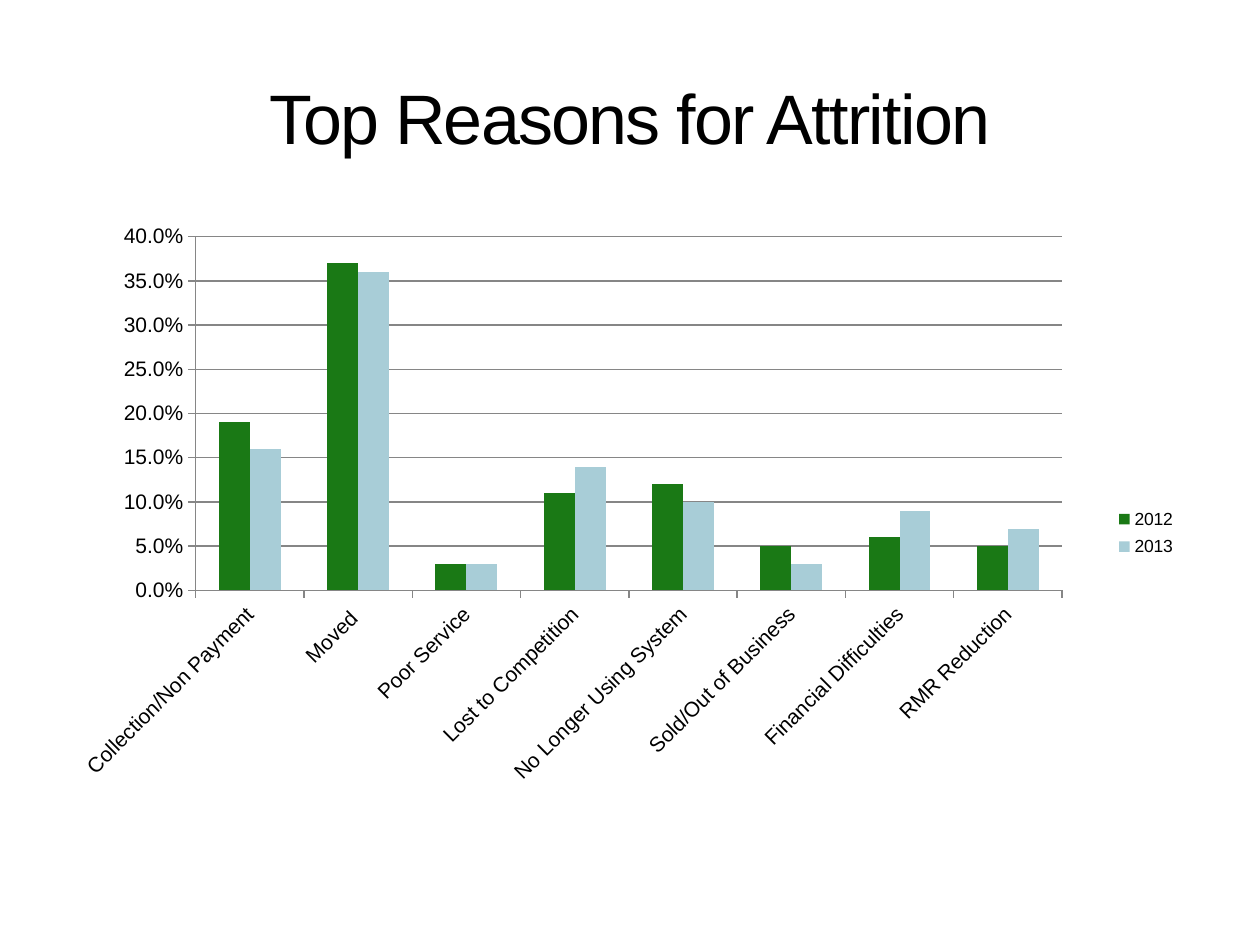
import lxml.etree
import pptx
import pptx.chart.data
import pptx.dml.color
import pptx.enum.chart
import pptx.enum.text
import pptx.oxml
import pptx.oxml.ns
import pptx.util
from pptx.util import Inches


def color(hex_string):
    return pptx.dml.color.RGBColor.from_string(hex_string)


def place(part, index, settings):
    """Give a chart part a fixed place, in fractions of the chart."""
    for old_layout in part.findall(pptx.oxml.ns.qn("c:layout")):
        part.remove(old_layout)
    layout = lxml.etree.Element(pptx.oxml.ns.qn("c:layout"))
    manual = lxml.etree.SubElement(layout, pptx.oxml.ns.qn("c:manualLayout"))
    for tag, value in settings.items():
        lxml.etree.SubElement(manual, pptx.oxml.ns.qn("c:" + tag)).set("val", str(value))
    part.insert(index, layout)


deck = pptx.Presentation()
deck.slide_width, deck.slide_height = Inches(10), Inches(7.5)
slide = deck.slides.add_slide(deck.slide_layouts[6])

# Title
title = slide.shapes.add_textbox(Inches(0.5), Inches(0.3), Inches(9), Inches(1.25))
title.text_frame.word_wrap = True
title.text_frame.vertical_anchor = pptx.enum.text.MSO_ANCHOR.MIDDLE
heading = title.text_frame.paragraphs[0]
heading.text = "Top Reasons for Attrition"
heading.alignment = pptx.enum.text.PP_ALIGN.CENTER
heading.font.name = "Arial"
heading.font.size = pptx.util.Pt(40)
heading.font.color.rgb = color("000000")
# Letter spacing in hundredths of a point
heading.runs[0].font._element.set("spc", "-100")

# Share of attrition by reason
reasons = [
    ("Collection/Non Payment", 0.19, 0.16),
    ("Moved ", 0.37, 0.36),
    ("Poor Service", 0.03, 0.03),
    ("Lost to Competition", 0.11, 0.14),
    ("No Longer Using System", 0.12, 0.1),
    ("Sold/Out of Business", 0.05, 0.03),
    ("Financial Difficulties", 0.06, 0.09),
    ("RMR Reduction", 0.05, 0.07),
]
years = [("2012", "1A7915"), ("2013", "A8CDD7")]

attrition = pptx.chart.data.CategoryChartData(number_format="0.0%")
attrition.categories = [reason[0] for reason in reasons]
for column, (year, _) in enumerate(years, start=1):
    attrition.add_series(year, [reason[column] for reason in reasons])

# Column chart
chart = slide.shapes.add_chart(
    pptx.enum.chart.XL_CHART_TYPE.COLUMN_CLUSTERED,
    Inches(0.5), Inches(1.75), Inches(9), Inches(4.96), attrition,
).chart
chart.has_title = False
chart.font.name = "Arial"
chart.font.size = pptx.util.Pt(10)
chart.font.color.rgb = color("000000")

columns = chart.plots[0]
columns.gap_width = 150
columns.overlap = 0
columns.vary_by_categories = False
for series, (_, fill) in zip(columns.series, years):
    series.format.fill.solid()
    series.format.fill.fore_color.rgb = color(fill)
    series.invert_if_negative = False

# Legend
chart.has_legend = True
chart.legend.position = pptx.enum.chart.XL_LEGEND_POSITION.RIGHT
chart.legend.include_in_layout = False
place(chart.legend._element, 1, {
    "xMode": "edge", "yMode": "edge", "x": 0.925, "y": 0.45, "w": 0.06, "h": 0.1,
})

# Axes
for axis in (chart.category_axis, chart.value_axis):
    axis.major_tick_mark = pptx.enum.chart.XL_TICK_MARK.OUTSIDE
    axis.minor_tick_mark = pptx.enum.chart.XL_TICK_MARK.NONE
    axis.tick_labels.font.name = "Arial"
    axis.tick_labels.font.size = pptx.util.Pt(12)
    axis.tick_labels.font.color.rgb = color("000000")
    axis.format.line.color.rgb = color("868686")
    axis.format.line.width = pptx.util.Pt(0.75)

shares = chart.value_axis
shares.minimum_scale, shares.maximum_scale, shares.major_unit = 0, 0.4, 0.05
shares.tick_labels.number_format = "0.0%"
shares.tick_labels.number_format_is_linked = False
shares.has_major_gridlines = True
shares.major_gridlines.format.line.color.rgb = color("868686")
shares.major_gridlines.format.line.width = pptx.util.Pt(0.75)

# Slanted category labels
label_body = chart.category_axis._element.find(".//" + pptx.oxml.ns.qn("a:bodyPr"))
label_body.set("rot", "-2700000")
label_body.set("vert", "horz")

# Inner plot area
place(chart._chartSpace.chart.plotArea, 0, {
    "layoutTarget": "inner", "xMode": "edge", "yMode": "edge",
    "x": 0.117, "y": 0.026, "w": 0.764, "h": 0.566,
})

deck.save("out.pptx")
